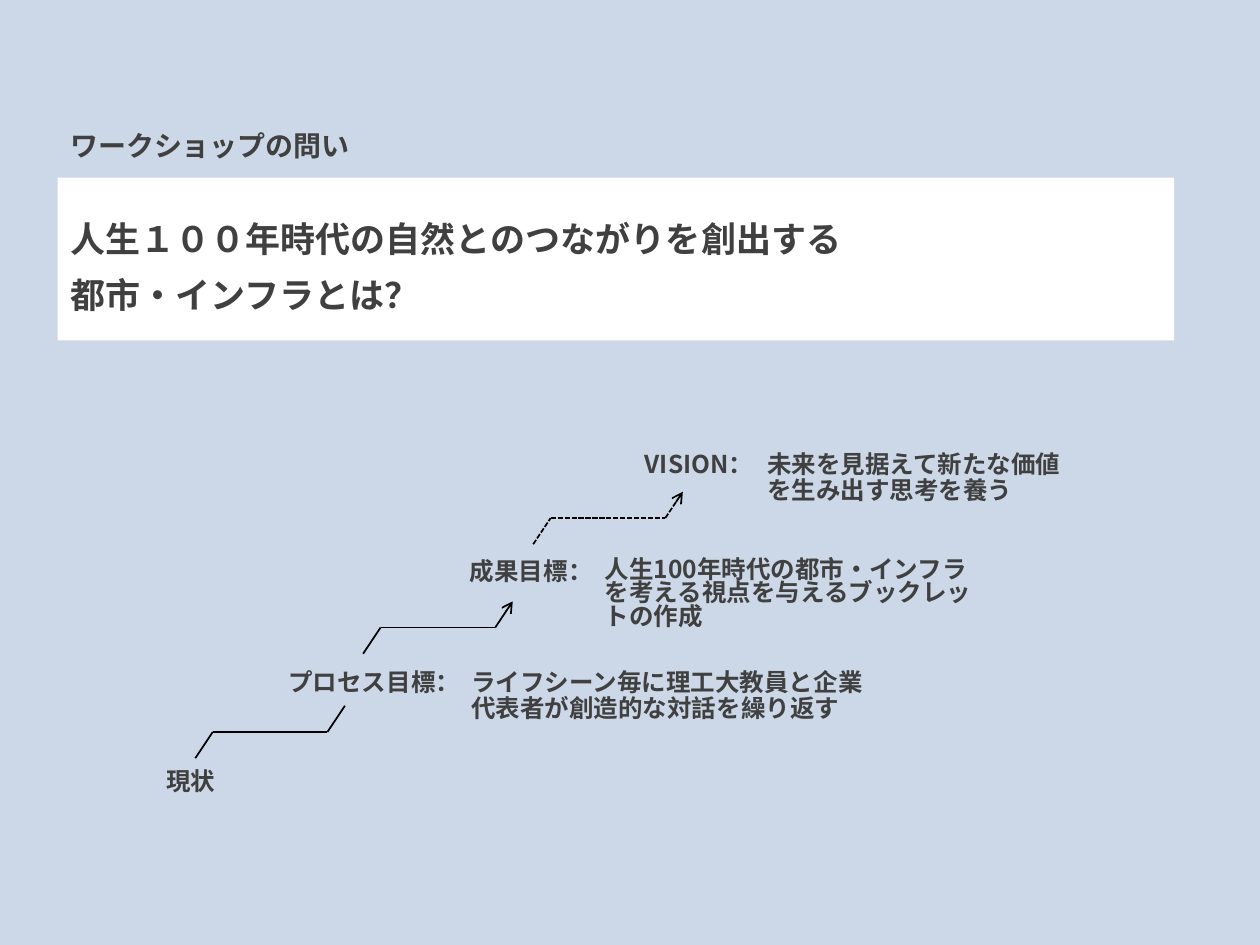
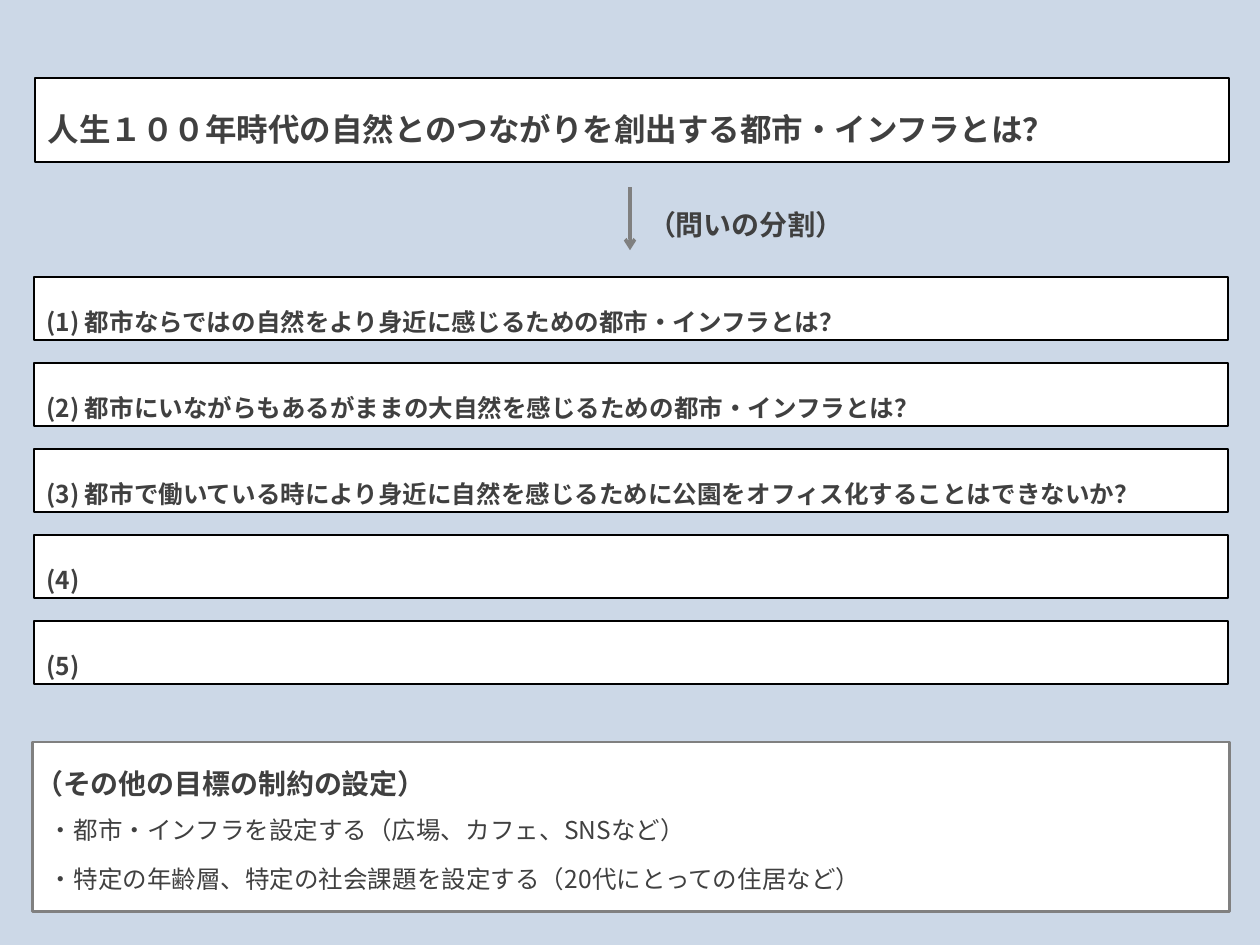
from lxml import etree
from pptx import Presentation
from pptx.dml.color import RGBColor
from pptx.enum.dml import MSO_LINE
from pptx.enum.shapes import MSO_CONNECTOR, MSO_SHAPE
from pptx.enum.text import MSO_ANCHOR, MSO_AUTO_SIZE, PP_ALIGN
from pptx.oxml.ns import qn
from pptx.util import Pt

BACK = RGBColor(0xCC, 0xD8, 0xE7)
WHITE = RGBColor(0xFF, 0xFF, 0xFF)
BLACK = RGBColor(0, 0, 0)
GREY = RGBColor(0x80, 0x80, 0x80)
INK = RGBColor(0x40, 0x40, 0x40)
FONT = "Noto Sans CJK JP"
LEFT, CENTER = PP_ALIGN.LEFT, PP_ALIGN.CENTER
TOP, MIDDLE = MSO_ANCHOR.TOP, MSO_ANCHOR.MIDDLE
NO_FIT = MSO_AUTO_SIZE.NONE
RECT = MSO_SHAPE.RECTANGLE
STRAIGHT = MSO_CONNECTOR.STRAIGHT
DASH = MSO_LINE.SQUARE_DOT
COVER, TITLE_ONLY = 0, 5
WIDE = Pt(32)


class Deck:
    def __init__(self):
        self.prs = Presentation()
        self.prs.slide_width, self.prs.slide_height = Pt(720), Pt(540)
        fill = self.prs.slide_master.background.fill
        fill.solid()
        fill.fore_color.rgb = BACK
        self.slide = None

    def page(self, layout):
        self.slide = self.prs.slides.add_slide(self.prs.slide_layouts[layout])

    def label(self, shape, lines, size, bold=True, space=WIDE, before=0,
              align=LEFT, anchor=MIDDLE):
        frame = shape.text_frame
        frame.word_wrap = True
        frame.auto_size = NO_FIT
        frame.vertical_anchor = anchor
        for i, line in enumerate(lines):
            para = frame.add_paragraph() if i else frame.paragraphs[0]
            para.text = line
            para.alignment = align
            para.line_spacing = space
            para.space_before = Pt(before)
            font = para.font
            font.name, font.size, font.bold = FONT, Pt(size), bold
            font.color.rgb = INK
            # East Asian glyphs need their own typeface entry
            props = para._p.pPr.find(qn("a:defRPr"))
            etree.SubElement(props, qn("a:ea")).set("typeface", FONT)

    def holder(self, index, box, line, size, **style):
        shape = self.slide.placeholders[index]
        shape.left, shape.top, shape.width, shape.height = map(Pt, box)
        self.label(shape, [line], size, **style)
        return shape

    def text(self, box, lines, size, **style):
        shape = self.slide.shapes.add_textbox(*map(Pt, box))
        self.label(shape, lines, size, **style)

    def paint(self, shape, edge=None, width=1):
        shape.fill.solid()
        shape.fill.fore_color.rgb = WHITE
        if edge is None:
            shape.line.fill.background()
        else:
            shape.line.color.rgb = edge
            shape.line.width = Pt(width)

    def panel(self, box, edge, width=1):
        shape = self.slide.shapes.add_shape(RECT, *map(Pt, box))
        shape.shadow.inherit = False
        self.paint(shape, edge, width)
        return shape

    def line(self, start, end, color=BLACK, width=1, dash=None, arrow=False,
             group=None):
        shapes = (group or self.slide).shapes
        link = shapes.add_connector(STRAIGHT, *map(Pt, (*start, *end)))
        link.line.color.rgb = color
        link.line.width = Pt(width)
        if dash:
            link.line.dash_style = dash
        if arrow:
            edge = link._element.spPr.find(qn("a:ln"))
            etree.SubElement(edge, qn("a:tailEnd")).set("type", "arrow")
        etree.SubElement(link._element.spPr, qn("a:effectLst"))

    def step(self, x, y, dash=None, arrow=True):
        group = self.slide.shapes.add_group_shape()
        points = [(x, y), (x + 10, y - 15), (x + 75.5, y - 15),
                  (x + 85.5, y - 30)]
        for i, (start, end) in enumerate(zip(points, points[1:])):
            self.line(start, end, dash=dash, arrow=arrow and i == 2,
                      group=group)


def goals(deck):
    deck.page(COVER)
    # Workshop question
    title = deck.holder(0, (33, 101.5, 638, 93),
                        "人生１００年時代の自然とのつながりを創出する\v"
                        "都市・インフラとは？", 20)
    deck.paint(title)
    deck.holder(1, (33, 67, 424, 34.5), "ワークショップの問い", 16,
                space=0.9, before=10)

    # Goal names and what they mean
    names = [("VISION：", 361.4, 254.9, 79.2),
             ("成果目標：", 261.4, 316.1, 94.3),
             ("プロセス目標：", 157.7, 379.4, 132.5),
             ("現状", 87.8, 436.3, 56.9)]
    for name, x, y, w in names:
        deck.text((x, y, w, 24), [name], 14, space=0.9, before=10, anchor=TOP)
    notes = [("未来を見据えて新たな価値を生み出す思考を養う",
              431.3, 254.9, 185, 0.9),
             ("人生100年時代の都市・インフラを考える視点を与えるブックレットの作成",
              338.4, 316.1, 224.6, 0.8),
             ("ライフシーン毎に理工大教員と企業代表者が創造的な対話を繰り返す",
              262.1, 379.4, 248.4, 0.9)]
    for note, x, y, w, space in notes:
        deck.text((x, y, w, 48), [note], 14, space=space, before=10,
                  anchor=TOP)

    # Stairs from the present up to the vision
    deck.step(111.6, 433.3, arrow=False)
    deck.step(207.5, 373.6)
    deck.step(304.7, 311, dash=DASH)


def split(deck):
    deck.page(TITLE_ONLY)
    # Main question
    title = deck.holder(0, (20, 44.5, 682.5, 48),
                        "人生１００年時代の自然とのつながりを創出する"
                        "都市・インフラとは？", 18)
    deck.paint(title, BLACK)
    deck.line((360, 107), (360, 143), GREY, 2, arrow=True)
    deck.text((354.2, 104.4, 144, 34.6), ["（問いの分割）"], 16, align=CENTER)

    # Smaller questions
    parts = ["(1) 都市ならではの自然をより身近に感じるための都市・インフラとは？",
             "(2) 都市にいながらもあるがままの大自然を感じるための都市・インフラとは？",
             "(3) 都市で働いている時により身近に自然を感じるために"
             "公園をオフィス化することはできないか？",
             "(4)", "(5)"]
    for i, part in enumerate(parts):
        row = deck.panel((19.4, 158.4 + 49.15 * i, 682.5, 36), BLACK)
        deck.label(row, [part], 14)

    # Other limits
    deck.panel((18.5, 424, 684, 97), GREY, 1.5)
    deck.text((20.9, 443.5, 674, 77.8),
              ["・都市・インフラを設定する（広場、カフェ、SNSなど）",
               "・特定の年齢層、特定の社会課題を設定する（20代にとっての住居など）"],
              14, bold=False, space=Pt(28))
    deck.text((13, 424, 535, 34.6), ["（その他の目標の制約の設定）"], 16)


def main():
    deck = Deck()
    goals(deck)
    split(deck)
    deck.prs.save("out.pptx")


if __name__ == "__main__":
    main()
